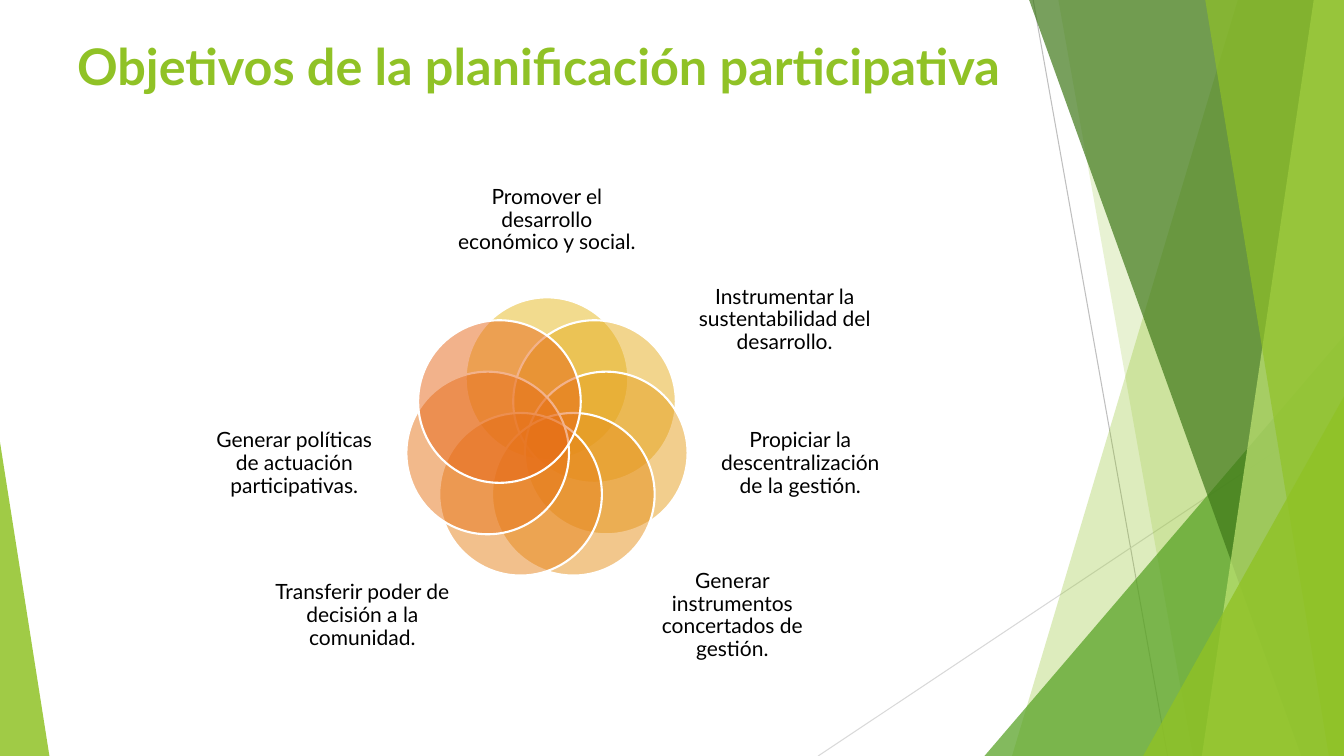
"""Build the slide on the goals of participatory planning."""
from math import cos, pi, sin

from lxml import etree
from pptx import Presentation
from pptx import util as u
from pptx.dml.color import RGBColor
from pptx.enum import shapes, text
from pptx.oxml.ns import qn

COLS, ROWS = 40, 30
COL, ROW = u.Inches(1 / 3), u.Inches(1 / 4)
GREEN = "90C226"

deck = Presentation()
deck.slide_width, deck.slide_height = COLS * COL, ROWS * ROW
slide = deck.slides.add_slide(deck.slide_layouts[6])
items = slide.shapes


def paint(shape, color, alpha):
    """Give a shape a see-through fill, no line and no shadow."""
    shape.shadow.inherit = False
    shape.fill.solid()
    shape.fill.fore_color.rgb = RGBColor.from_string(color)
    tint = shape.fill._xPr.find(qn("a:solidFill"))[0]
    etree.SubElement(tint, qn("a:alpha")).set("val", str(alpha * 1000))
    shape.line.fill.background()


def write(words, left, top, width, height, size, color):
    """Add a wrapped text box and return its frame, paragraph and run."""
    box = items.add_textbox(int(left * COL), int(top * ROW),
                            int(width * COL), int(height * ROW))
    frame = box.text_frame
    frame.word_wrap = True
    para = frame.paragraphs[0]
    run = para.add_run()
    run.text = words
    run.font.name = "Lato"
    run.font.size = u.Pt(size)
    run.font.color.rgb = RGBColor.from_string(color)
    return frame, para, run


rays = [(30.75, 0, 34.75, 30, "BFBFBF"), (40, 16.1, 24.35, 30, "D9D9D9")]
for x1, y1, x2, y2, color in rays:
    ray = items.add_connector(shapes.MSO_CONNECTOR.STRAIGHT, int(x1 * COL),
                              int(y1 * ROW), int(x2 * COL), int(y2 * ROW))
    ray.line.color.rgb = RGBColor.from_string(color)
    ray.line.width = u.Pt(0.75)
    etree.SubElement(ray._element.spPr, qn("a:effectLst"))

# color, alpha, kind, geometry
panels = [
    (GREEN, 30, "band", (36.84, 30.12)),
    (GREEN, 20, "band", (31.5, 35.5)),
    ("54A021", 72, "wedge", (29.3, 13.33, 10.7, 1)),
    ("3F7819", 70, "band", (30.63, 38.73)),
    ("C0E474", 70, "band", (39.1, 35.77)),
    (GREEN, 65, "band", (35.87, 39.55)),
    (GREEN, 80, "wedge", (34.02, 15.73, 5.98, 1)),
    (GREEN, 85, "wedge", (0, 17.55, 1.47, 0)),
]
for color, alpha, kind, place in panels:
    if kind == "band":
        head, foot = place
        pen = items.build_freeform(int(head * COL), 0)
        pen.add_line_segments([(COLS * COL, 0), (COLS * COL, ROWS * ROW),
                               (int(foot * COL), ROWS * ROW)], close=True)
        panel = pen.convert_to_shape()
    else:
        left, top, width, apex = place
        panel = items.add_shape(
            shapes.MSO_SHAPE.ISOSCELES_TRIANGLE, int(left * COL),
            int(top * ROW), int(width * COL), int((ROWS - top) * ROW))
        panel.adjustments[0] = apex
    paint(panel, color, alpha)

frame, para, run = write("Objetivos de la planificación participativa",
                         2, 1.2, 36, 5, 36, GREEN)
run.font.bold = True

goals = [
    ("E6B91E", "Promover el desarrollo económico y social.",
     (13.5, 6.76, 5.55, 3.96)),
    ("E6AC1D", "Instrumentar la sustentabilidad del desarrollo.",
     (20.73, 10.52, 5.25, 4.36)),
    ("E69E1C", "Propiciar la descentralización de la gestión.",
     (21.24, 16.08, 5.16, 4.64)),
    ("E6901B", "Generar instrumentos concertados de gestión.",
     (19.02, 22.32, 5.55, 4.24)),
    ("E7821A", "Transferir poder de decisión a la comunidad.",
     (8.01, 22.32, 5.55, 4.24)),
    ("E77419", "Generar políticas de actuación participativas.",
     (6.18, 16.08, 5.16, 4.64)),
    ("E76618", "", None),
]
mid_x, mid_y = 16.28 * COL, 17.44 * ROW
ring, size = 1.81 * COL, 4.84 * COL
for i, (color, words, place) in enumerate(goals):
    turn = 2 * pi * i / len(goals)
    petal = items.add_shape(
        shapes.MSO_SHAPE.OVAL, int(mid_x + ring * sin(turn) - size / 2),
        int(mid_y - ring * cos(turn) - size / 2), int(size), int(size))
    paint(petal, color, 50)
    petal.line.color.rgb = RGBColor.from_string("FFFFFF")
    petal.line.width = u.Pt(1.5)
    if words:
        frame, para, run = write(words, *place, 15, "000000")
        frame.margin_left = frame.margin_right = 0
        frame.margin_top = frame.margin_bottom = 0
        frame.vertical_anchor = text.MSO_ANCHOR.MIDDLE
        para.alignment = text.PP_ALIGN.CENTER
        para.line_spacing = 0.9

deck.save("out.pptx")
